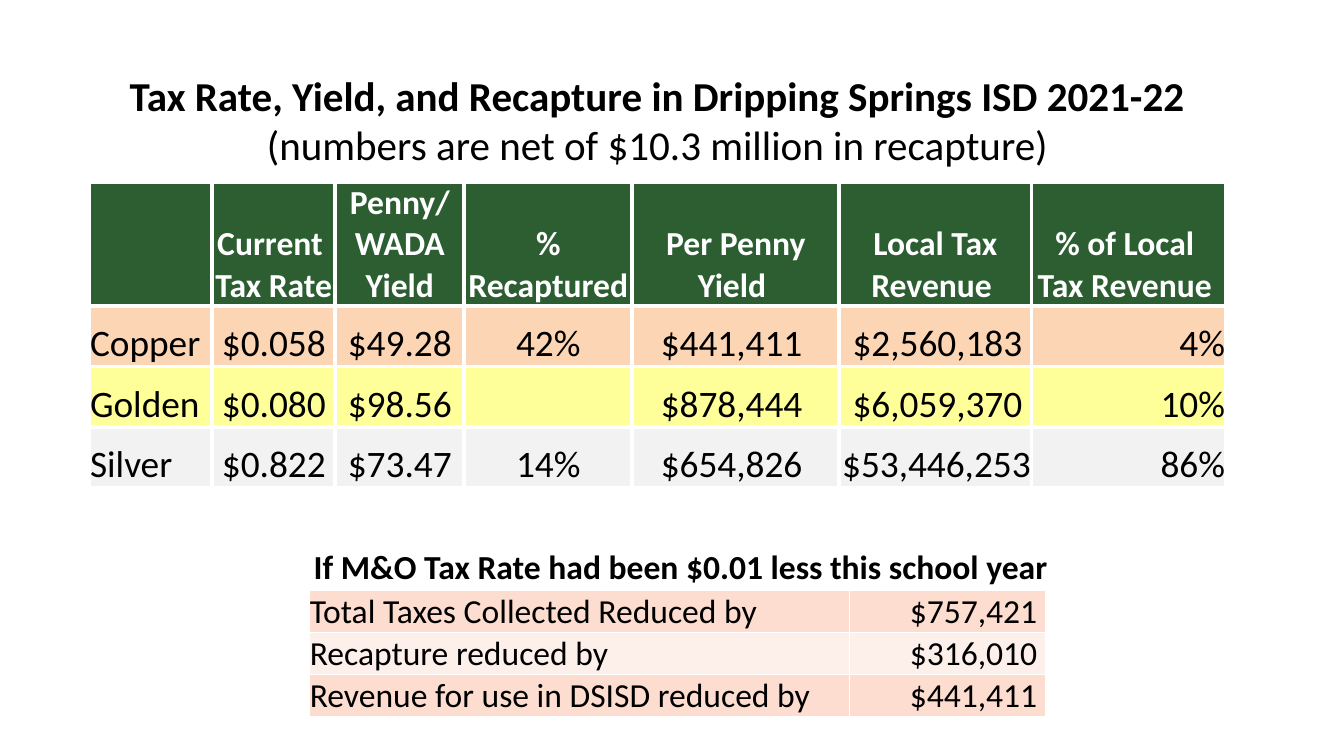
from dataclasses import dataclass

from lxml.etree import SubElement
from pptx import Presentation
from pptx.dml.color import RGBColor
from pptx.enum.text import MSO_ANCHOR, MSO_AUTO_SIZE, PP_ALIGN
from pptx.oxml.ns import qn
from pptx.util import Emu, Pt

SCALE = 9144
ALIGN = {"l": PP_ALIGN.LEFT, "c": PP_ALIGN.CENTER, "r": PP_ALIGN.RIGHT}


@dataclass(frozen=True)
class Theme:
    font: str = "Calibri"
    ink: str = "000000"
    white: str = "FFFFFF"
    green: str = "2C5E32"
    copper: str = "FCD5B5"
    golden: str = "FFFF99"
    silver: str = "F2F2F2"
    rose: str = "FCDDCF"
    blush: str = "FDEFE9"
    title: int = 44
    body: int = 40
    label: int = 36


@dataclass
class Row:
    texts: list
    sides: str
    fill: str
    size: int
    color: str
    bold: bool = False


def px(count):
    return Emu(count * SCALE)


class Page:
    def __init__(self, slide, theme):
        self.slide = slide
        self.theme = theme

    def letter(self, frame, lines, side, size, color, bolds):
        for i, (line, bold) in enumerate(zip(lines, bolds)):
            para = frame.paragraphs[0] if i == 0 else frame.add_paragraph()
            para.text = line
            para.alignment = ALIGN[side]
            font = para.font
            font.name = self.theme.font
            font.size = Pt(size)
            font.bold = bold
            font.color.rgb = RGBColor.from_string(color)

    def text(self, box, lines, side, size, bolds):
        frame = self.slide.shapes.add_textbox(*map(px, box)).text_frame
        frame.word_wrap = True
        frame.auto_size = MSO_AUTO_SIZE.SHAPE_TO_FIT_TEXT
        self.letter(frame, lines, side, size, self.theme.ink, bolds)

    def edge(self, cell, weight):
        props = cell._tc.get_or_add_tcPr()
        for tag in ("a:lnL", "a:lnR", "a:lnT", "a:lnB"):
            line = SubElement(props, qn(tag), w=str(Pt(weight)))
            fill = SubElement(line, qn("a:solidFill"))
            SubElement(fill, qn("a:srgbClr"), val=self.theme.white)

    def cell(self, cell, text, side, row, weight):
        self.edge(cell, weight)
        cell.fill.solid()
        cell.fill.fore_color.rgb = RGBColor.from_string(row.fill)
        cell.vertical_anchor = MSO_ANCHOR.BOTTOM
        cell.margin_left = cell.margin_right = cell.margin_top = px(1)
        cell.margin_bottom = 0
        lines = text.split("\n")
        self.letter(cell.text_frame, lines, side, row.size, row.color,
                    [row.bold] * len(lines))

    def table(self, left, top, widths, heights, rows, weight):
        box = (left, top, sum(widths), sum(heights))
        table = self.slide.shapes.add_table(
            len(rows), len(widths), *map(px, box)).table
        table.first_row = table.horz_banding = False
        for col, width in zip(table.columns, widths):
            col.width = px(width)
        for line, height, row in zip(table.rows, heights, rows):
            line.height = px(height)
            for cell, text, side in zip(line.cells, row.texts, row.sides):
                self.cell(cell, text, side, row, weight)


def main():
    deck = Presentation()
    deck.slide_width, deck.slide_height = px(2000), px(1125)
    theme = Theme()
    page = Page(deck.slides.add_slide(deck.slide_layouts[6]), theme)

    heads = ["", "Current \nTax Rate", "Penny/ WADA\nYield", "% Recaptured",
             "Per Penny Yield ", "Local Tax Revenue ",
             "% of Local \nTax Revenue "]
    rates = [
        (theme.copper, ["Copper", "$0.058", "$49.28", "42%",
                        "$441,411 ", "$2,560,183 ", "4%"]),
        (theme.golden, ["Golden", "$0.080", "$98.56", "",
                        "$878,444 ", "$6,059,370 ", "10%"]),
        (theme.silver, ["Silver", "$0.822", "$73.47", "14%",
                        "$654,826 ", "$53,446,253 ", "86%"]),
    ]
    rows = [Row(heads, "ccccccc", theme.green, theme.label, theme.white, True)]
    rows += [Row(texts, "lccccrr", fill, theme.body, theme.ink)
             for fill, texts in rates]
    page.table(133, 271, [183, 183, 192, 250, 308, 286, 289],
               [181, 90, 90, 90], rows, 4.5)

    cuts = [
        (theme.rose, ["Total Taxes Collected Reduced by", "$757,421 "]),
        (theme.blush, ["Recapture reduced by", "$316,010 "]),
        (theme.rose, ["Revenue for use in DSISD reduced by", "$441,411 "]),
    ]
    rows = [Row(texts, "lr", fill, theme.label, theme.ink)
            for fill, texts in cuts]
    page.table(460, 879, [804, 292], [61] * 3, rows, 1)

    page.text((457, 808, 1117, 71),
              ["If M&O Tax Rate had been $0.01 less this school year"],
              "l", theme.label, [True])
    page.text((133, 100, 1692, 158),
              ["Tax Rate, Yield, and Recapture in Dripping Springs ISD 2021-22",
               "(numbers are net of $10.3 million in recapture)"],
              "c", theme.title, [True, False])
    deck.save("out.pptx")


if __name__ == "__main__":
    main()
